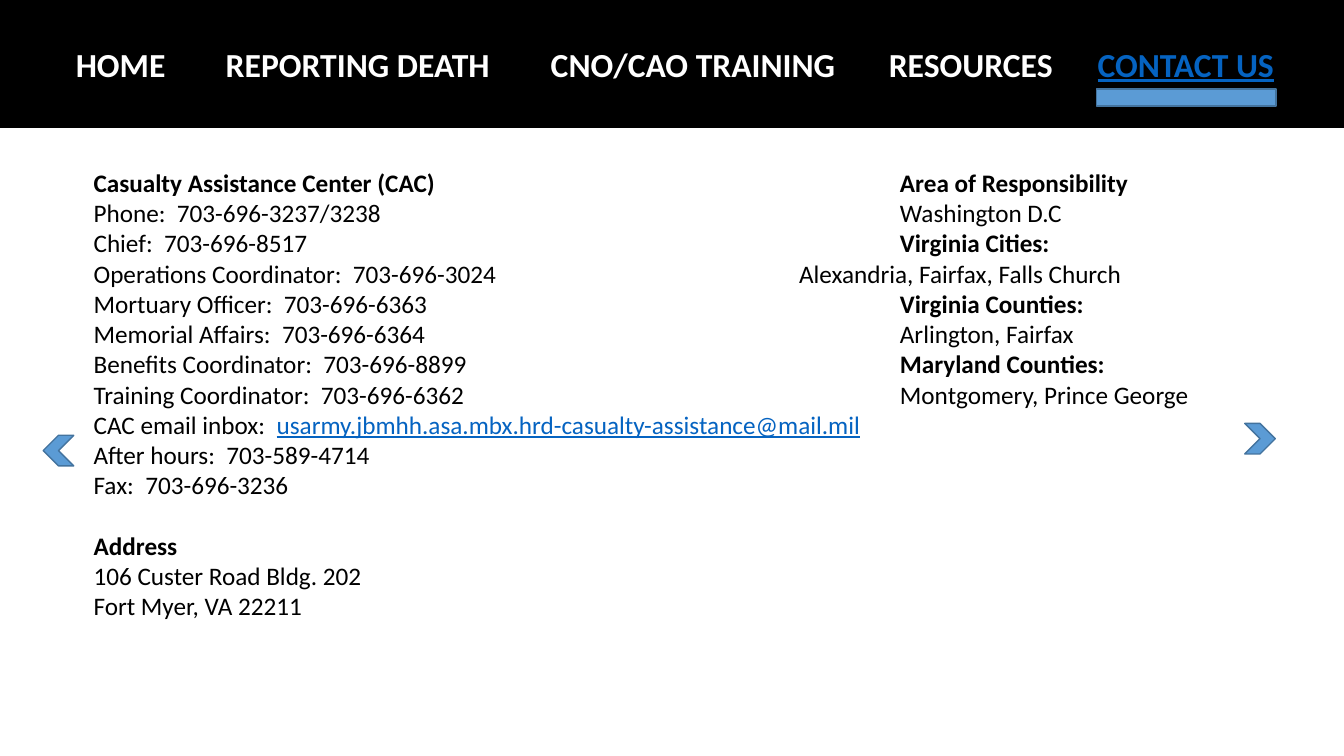
from lxml import etree
from pptx import Presentation
from pptx.dml.color import RGBColor
from pptx.enum.shapes import MSO_SHAPE
from pptx.oxml.ns import qn
from pptx.util import Cm, Pt

RECTANGLE = MSO_SHAPE.RECTANGLE
CHEVRON = MSO_SHAPE.CHEVRON

COLORS = {
    "black": "000000",
    "white": "FFFFFF",
    "accent": "5B9BD5",
    "outline": "43739E",
    "link": "0563C1",
}
FONT = "Calibri"

MENU = ["HOME", "REPORTING DEATH", "CNO/CAO TRAINING", "RESOURCES"]
CURRENT_ITEM = "CONTACT US"
MENU_TABS = [3.78, 11.97, 20.49, 25.75]

AREA_TAB = 20.32
CITIES_TAB = 17.78
LINE_GAP = 21.7

# Contact text, area text, tab stop of the area text
CONTACTS = [
    ("Casualty Assistance Center (CAC)", "Area of Responsibility", AREA_TAB),
    ("Phone:  703-696-3237/3238", "Washington D.C", AREA_TAB),
    ("Chief:  703-696-8517", "Virginia Cities:", AREA_TAB),
    ("Operations Coordinator:  703-696-3024", "Alexandria, Fairfax, Falls Church", CITIES_TAB),
    ("Mortuary Officer:  703-696-6363", "Virginia Counties:", AREA_TAB),
    ("Memorial Affairs:  703-696-6364", "Arlington, Fairfax", AREA_TAB),
    ("Benefits Coordinator:  703-696-8899", "Maryland Counties:", AREA_TAB),
    ("Training Coordinator:  703-696-6362", "Montgomery, Prince George", AREA_TAB),
]
EMAIL = ("CAC email inbox:  ", "usarmy.jbmhh.asa.mbx.hrd-casualty-assistance@mail.mil")
OTHER_LINES = [
    "After hours:  703-589-4714",
    "Fax:  703-696-3236",
    "Address",
    "106 Custer Road Bldg. 202",
    "Fort Myer, VA 22211",
]
HEADINGS = {
    "Casualty Assistance Center (CAC)",
    "Area of Responsibility",
    "Virginia Cities:",
    "Virginia Counties:",
    "Maryland Counties:",
    "Address",
}


def color(name):
    return RGBColor.from_string(COLORS[name])


def add_span(para, text, size=18, fill="black", bold=False, underline=False):
    span = para.add_run()
    span.text = text
    span.font.name = FONT
    span.font.size = Pt(size)
    span.font.bold = bold
    span.font.underline = underline
    span.font.color.rgb = color(fill)


def set_tabs(para, stops):
    """Give the paragraph left tab stops, in centimetres from the text edge."""
    tab_list = etree.SubElement(para._p.get_or_add_pPr(), qn("a:tabLst"))
    for stop in stops:
        etree.SubElement(tab_list, qn("a:tab"), pos=str(Cm(stop)), algn="l")


class SlideBuilder:
    def __init__(self, page):
        self.page = page

    def shape(self, kind, left, top, width, height, fill="accent", line="outline", flip=False):
        shape = self.page.shapes.add_shape(kind, Cm(left), Cm(top), Cm(width), Cm(height))
        shape.shadow.inherit = False
        shape.fill.solid()
        shape.fill.fore_color.rgb = color(fill)
        shape.line.color.rgb = color(line)
        shape.line.width = Pt(1)
        if flip:
            shape._element.spPr.xfrm.set("flipH", "1")

    def text_box(self, left, top, width, height):
        box = self.page.shapes.add_textbox(Cm(left), Cm(top), Cm(width), Cm(height))
        box.text_frame.word_wrap = True
        return box.text_frame


def add_menu(builder):
    builder.shape(RECTANGLE, 0, 0, 33.87, 3.2, fill="black", line="black")
    frame = builder.text_box(1.09, 0.97, 31.9, 1.27)
    frame.margin_left = Cm(0.82)
    para = frame.paragraphs[0]
    set_tabs(para, MENU_TABS)
    for item in MENU:
        add_span(para, item + "\t", size=24, fill="white", bold=True)
    add_span(para, CURRENT_ITEM, size=24, fill="link", bold=True, underline=True)
    builder.shape(RECTANGLE, 27.64, 2.24, 4.52, 0.43)


def add_contacts(builder):
    frame = builder.text_box(2.11, 4.09, 28.98, 12.57)
    para = frame.paragraphs[0]
    for contact, area, stop in CONTACTS:
        set_tabs(para, [stop])
        add_span(para, contact + "\t", bold=contact in HEADINGS)
        add_span(para, area, bold=area in HEADINGS)
        para = frame.add_paragraph()

    label, address = EMAIL
    add_span(para, label)
    add_span(para, address, fill="link", underline=True)

    for text in OTHER_LINES:
        para = frame.add_paragraph()
        if text in HEADINGS:
            para.space_before = Pt(LINE_GAP)
        add_span(para, text, bold=text in HEADINGS)


def main():
    deck = Presentation()
    deck.slide_width, deck.slide_height = Cm(33.87), Cm(19.05)
    builder = SlideBuilder(deck.slides.add_slide(deck.slide_layouts[6]))
    add_menu(builder)
    builder.shape(CHEVRON, 1.09, 10.97, 0.77, 0.77, flip=True)
    builder.shape(CHEVRON, 31.37, 10.67, 0.77, 0.77)
    add_contacts(builder)
    deck.save("out.pptx")


if __name__ == "__main__":
    main()
